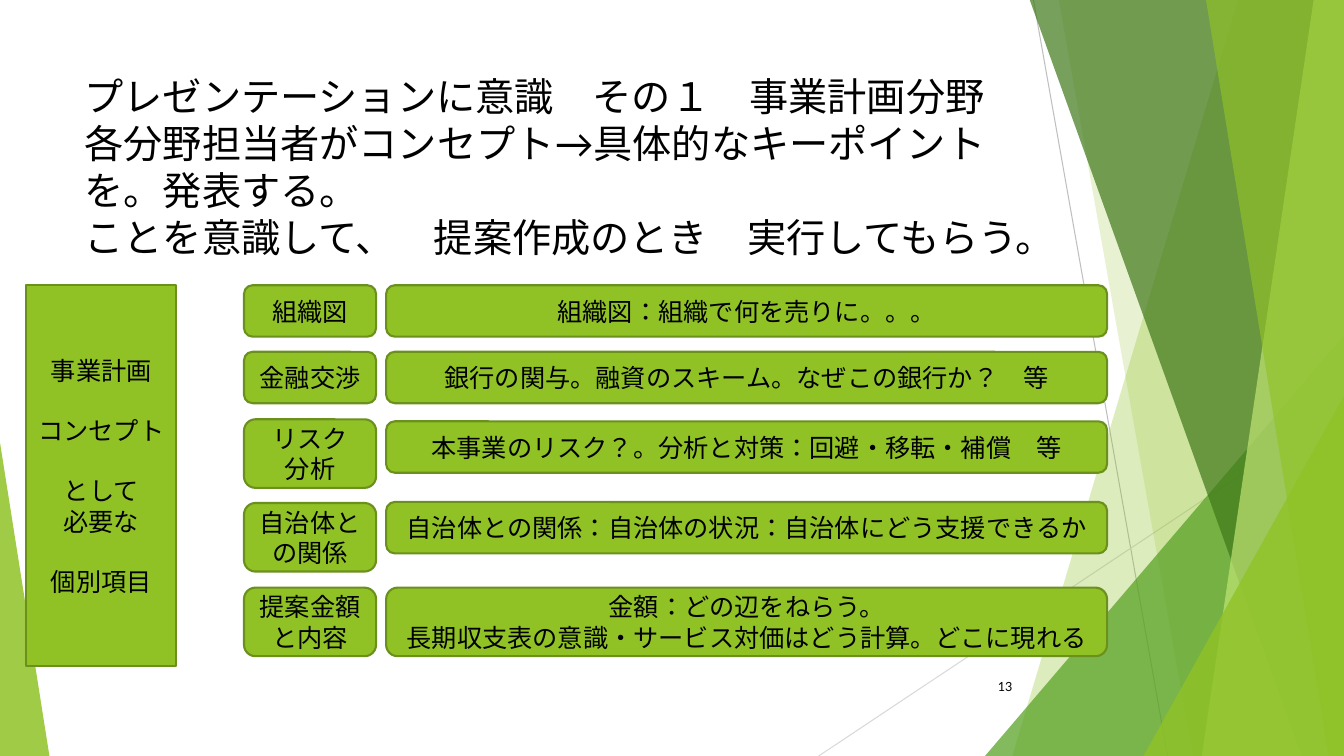
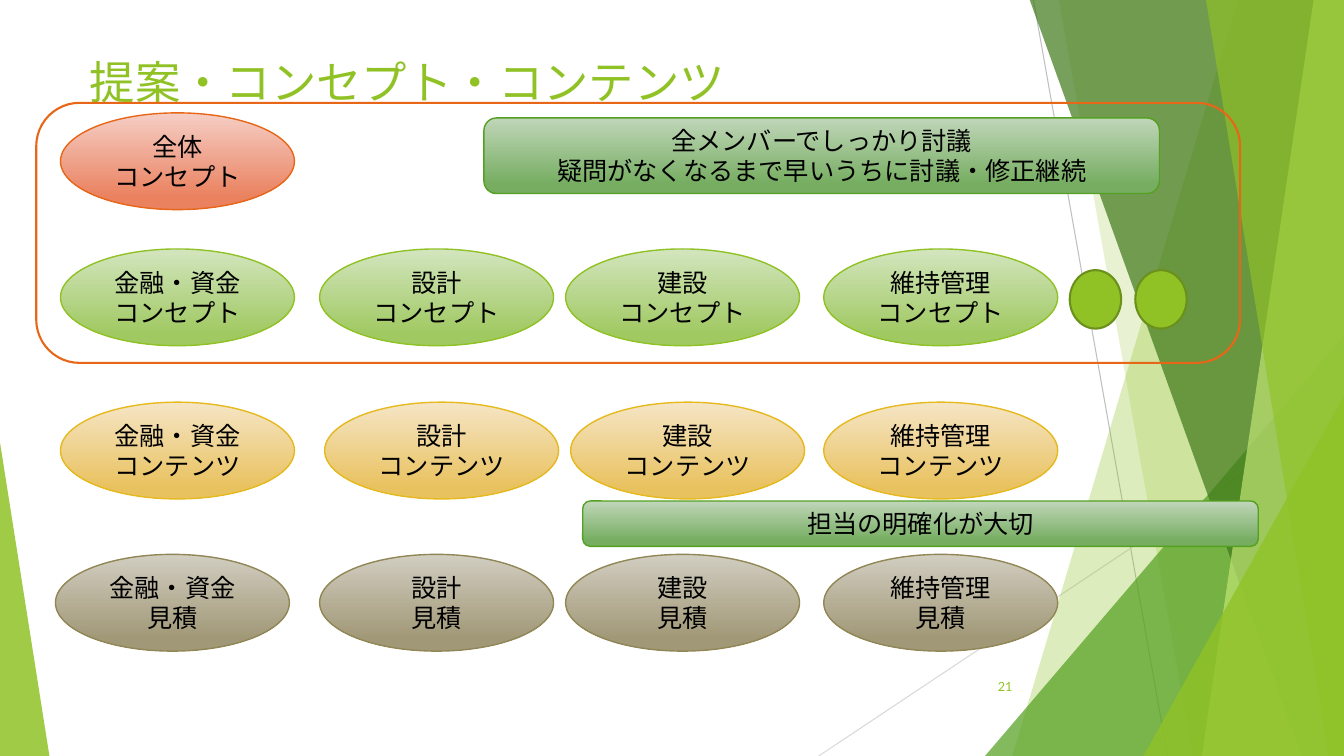
from dataclasses import dataclass

from lxml import etree
from pptx import Presentation
from pptx.dml.color import RGBColor
from pptx.enum.lang import MSO_LANGUAGE_ID
from pptx.enum.shapes import MSO_CONNECTOR, MSO_SHAPE
from pptx.enum.text import MSO_ANCHOR, MSO_AUTO_SIZE, PP_ALIGN
from pptx.oxml.ns import qn
from pptx.util import Inches, Pt

RECT, ROUNDED = MSO_SHAPE.RECTANGLE, MSO_SHAPE.ROUNDED_RECTANGLE
ELLIPSE, TRIANGLE = MSO_SHAPE.OVAL, MSO_SHAPE.ISOSCELES_TRIANGLE
STRAIGHT = MSO_CONNECTOR.STRAIGHT
LEFT, CENTER, RIGHT = PP_ALIGN.LEFT, PP_ALIGN.CENTER, PP_ALIGN.RIGHT
TOP, MIDDLE = MSO_ANCHOR.TOP, MSO_ANCHOR.MIDDLE
JAPANESE = MSO_LANGUAGE_ID.JAPANESE


@dataclass(frozen=True)
class Style:
    fill: tuple
    line: str
    weight: float


@dataclass(frozen=True)
class Theme:
    font: str = "Lato"
    ink: str = "000000"
    green: str = "90C226"
    leaf: str = "54A021"
    forest: str = "3F7819"
    lime: str = "C0E474"
    body_size: float = 18
    number_size: float = 9
    block_gap: float = 21.6
    solid: Style = Style(("90C226",), "6B901C", 1.5)
    frame: Style = Style((), "E76618", 1.5)
    orange: Style = Style(("F5CEC5", "EA815F"), "E76618", 1)
    concept: Style = Style(("D3E5BE", "A0C962"), "90C226", 1)
    content: Style = Style(("F5E5C5", "E9C260"), "E6B91E", 1)
    estimate: Style = Style(("D1CDC0", "A19877"), "918655", 1)
    banner: Style = Style(("C0D6B9", "76AD61"), "54A021", 1)


THEME = Theme()
PAGE_WIDTH, PAGE_HEIGHT = 13.33, 7.5
NUMBER_AREA = (9.39, 6.61, 0.75, 0.4)

HAIRLINES = [
    ((10.25, 0), (11.58, 7.5), "BFBFBF"),
    ((13.33, 4.03), (8.12, 7.5), "D9D9D9"),
]
FACETS = [
    ("band", (12.28, 10.04), THEME.green, 30),
    ("band", (10.5, 11.83), THEME.green, 20),
    ("corner", (9.77, 3.33, 3.56, 1), THEME.leaf, 72),
    ("band", (10.21, 12.91), THEME.forest, 70),
    ("band", (13.03, 11.92), THEME.lime, 70),
    ("band", (11.96, 13.18), THEME.green, 65),
    ("corner", (11.34, 3.93, 1.99, 1), THEME.green, 80),
    ("corner", (0, 4.39, 0.49, 0), THEME.green, 85),
]

PLAN = {
    "title": ["プレゼンテーションに意識　その１　事業計画分野",
              "各分野担当者がコンセプト→具体的なキーポイント",
              "を。発表する。",
              "ことを意識して、　提案作成のとき　実行してもらう。"],
    "title_area": (0.74, 0.67, 9.77, 2.16),
    "title_size": 28,
    "colour": THEME.ink,
    "number": "13",
}
PLAN_SIDE = [["事業計画"], ["コンセプト"], ["として", "必要な"], ["個別項目"]]
PLAN_SIDE_AREA = (0.26, 2.83, 1.49, 3.78)
TOPIC_COLUMN, DETAIL_COLUMN = (2.42, 1.31), (3.83, 7.15)
LOW, HIGH = 0.51, 0.68
PLAN_ROWS = [
    ((2.83, LOW, ["組織図"]),
     (2.83, LOW, ["組織図：組織で何を売りに。。。"])),
    ((3.49, LOW, ["金融交渉"]),
     (3.49, LOW, ["銀行の関与。融資のスキーム。なぜこの銀行か？　等"])),
    ((4.16, HIGH, ["リスク", "分析"]),
     (4.18, LOW, ["本事業のリスク？。分析と対策：回避・移転・補償　等"])),
    ((4.99, HIGH, ["自治体との関係"]),
     (4.98, LOW, ["自治体との関係：自治体の状況：自治体にどう支援できるか"])),
    ((5.83, HIGH, ["提案金額", "と内容"]),
     (5.83, HIGH, ["金額：どの辺をねらう。",
                   "長期収支表の意識・サービス対価はどう計算。どこに現れる"])),
]

PROPOSAL = {
    "title": ["提案・コンセプト・コンテンツ"],
    "title_area": (0.79, 0.49, 9.4, 0.53),
    "title_size": 32.4,
    "colour": THEME.green,
    "number": "21",
}
FIELDS = ["設計", "建設", "維持管理"]
OVAL_SIZE = (2.32, 0.96)
OVERALL = (0.6, 1.12, ["全体", "コンセプト"])
OVAL_ROWS = [
    ("コンセプト", THEME.concept, 2.47, (0.6, 3.17, 5.61, 8.17)),
    ("コンテンツ", THEME.content, 3.99, (0.6, 3.22, 5.66, 8.17)),
    ("見積", THEME.estimate, 5.5, (0.55, 3.17, 5.61, 8.17)),
]
DOTS = [(left, 2.68, 0.51, 0.58) for left in (10.61, 11.26)]
FRAME_AREA = (0.36, 1.02, 11.94, 2.58)
BANNERS = [
    ((4.8, 1.17, 6.7, 0.75),
     ["全メンバーでしっかり討議", "疑問がなくなるまで早いうちに討議・修正継続"]),
    ((5.78, 4.97, 6.7, 0.45), ["担当の明確化が大切"]),
]


def rgb(colour):
    return RGBColor.from_string(colour)


def inches(lengths):
    return [Inches(length) for length in lengths]


def add_span(para, text, size, colour):
    span = para.add_run()
    span.text = text
    span.font.name = THEME.font
    span.font.size = Pt(size)
    span.font.color.rgb = rgb(colour)
    span.font.language_id = JAPANESE
    east_asian = etree.Element(qn("a:ea"), typeface=THEME.font)
    span.font._element.find(qn("a:latin")).addnext(east_asian)


def set_frame(frame, anchor):
    frame.word_wrap = True
    frame.auto_size = MSO_AUTO_SIZE.NONE
    frame.vertical_anchor = anchor


def write_blocks(shape, blocks, align=CENTER, size=THEME.body_size, colour=THEME.ink):
    frame = shape.text_frame
    set_frame(frame, MIDDLE)
    para = None
    for block_index, block in enumerate(blocks):
        for line_index, text in enumerate(block):
            para = frame.add_paragraph() if para is not None else frame.paragraphs[0]
            para.alignment = align
            if block_index and not line_index:
                para.space_before = Pt(THEME.block_gap)
            add_span(para, text, size, colour)


def add_box(page, kind, area, style, blocks=()):
    box = page.shapes.add_shape(kind, *inches(area))
    box.shadow.inherit = False
    if len(style.fill) == 2:
        box.fill.gradient()
        box.fill.gradient_angle = 270
        for stop, colour, position in zip(box.fill.gradient_stops, style.fill, (0, 0.88)):
            stop.color.rgb = rgb(colour)
            stop.position = position
    elif style.fill:
        box.fill.solid()
        box.fill.fore_color.rgb = rgb(style.fill[0])
    else:
        box.fill.background()
    box.line.color.rgb = rgb(style.line)
    box.line.width = Pt(style.weight)
    if blocks:
        write_blocks(box, blocks)


def add_facet(shapes, kind, geometry, colour, opacity):
    if kind == "band":
        upper, lower = geometry
        points = [inches(point) for point in (
            (upper, -0.01), (PAGE_WIDTH, -0.01),
            (PAGE_WIDTH, PAGE_HEIGHT), (lower, PAGE_HEIGHT))]
        builder = shapes.build_freeform(*points[0])
        builder.add_line_segments(points[1:], close=True)
        facet = builder.convert_to_shape()
    else:
        left, top, width, apex = geometry
        facet = shapes.add_shape(TRIANGLE, *inches((left, top, width, PAGE_HEIGHT - top)))
        facet.adjustments[0] = apex
    facet.shadow.inherit = False
    facet.line.fill.background()
    facet.fill.solid()
    facet.fill.fore_color.rgb = rgb(colour)
    paint = facet.element.spPr.find(qn("a:solidFill")).find(qn("a:srgbClr"))
    etree.SubElement(paint, qn("a:alpha"), val=str(opacity * 1000))


def decorate_layout(layout, page):
    group = page.shapes.add_group_shape()
    for start, end, colour in HAIRLINES:
        line = group.shapes.add_connector(STRAIGHT, *inches(start + end))
        line.line.color.rgb = rgb(colour)
        line.line.width = Pt(0.75)
        etree.SubElement(line.element.spPr, qn("a:effectLst"))
    for facet in FACETS:
        add_facet(group.shapes, *facet)
    layout.shapes.element.insert(2, group.element)


def add_page(deck, layout, content):
    page = deck.slides.add_slide(layout)
    title = page.shapes.title
    title.left, title.top, title.width, title.height = inches(content["title_area"])
    set_frame(title.text_frame, TOP)
    para = title.text_frame.paragraphs[0]
    para.alignment = LEFT
    for index, text in enumerate(content["title"]):
        if index:
            para.add_line_break()
        add_span(para, text, content["title_size"], content["colour"])
    number = page.shapes.add_textbox(*inches(NUMBER_AREA))
    write_blocks(number, [[content["number"]]], RIGHT, THEME.number_size, content["colour"])
    return page


def fill_plan(page):
    add_box(page, RECT, PLAN_SIDE_AREA, THEME.solid, PLAN_SIDE)
    for row in PLAN_ROWS:
        for (left, width), (top, height, lines) in zip((TOPIC_COLUMN, DETAIL_COLUMN), row):
            add_box(page, ROUNDED, (left, top, width, height), THEME.solid, [lines])


def fill_proposal(page):
    left, top, lines = OVERALL
    add_box(page, ELLIPSE, (left, top, *OVAL_SIZE), THEME.orange, [lines])
    for stage, style, top, lefts in OVAL_ROWS:
        labels = [["金融・資金" + stage]] + [[field, stage] for field in FIELDS]
        for left, lines in zip(lefts, labels):
            add_box(page, ELLIPSE, (left, top, *OVAL_SIZE), style, [lines])
    for area in DOTS:
        add_box(page, ELLIPSE, area, THEME.solid)
    add_box(page, ROUNDED, FRAME_AREA, THEME.frame)
    for area, lines in BANNERS:
        add_box(page, ROUNDED, area, THEME.banner, [lines])


def main():
    deck = Presentation()
    deck.slide_width, deck.slide_height = inches((PAGE_WIDTH, PAGE_HEIGHT))
    layout = deck.slide_layouts.get_by_name("Title Only")
    plan = add_page(deck, layout, PLAN)
    decorate_layout(layout, plan)
    fill_plan(plan)
    fill_proposal(add_page(deck, layout, PROPOSAL))
    deck.save("out.pptx")


if __name__ == "__main__":
    main()
